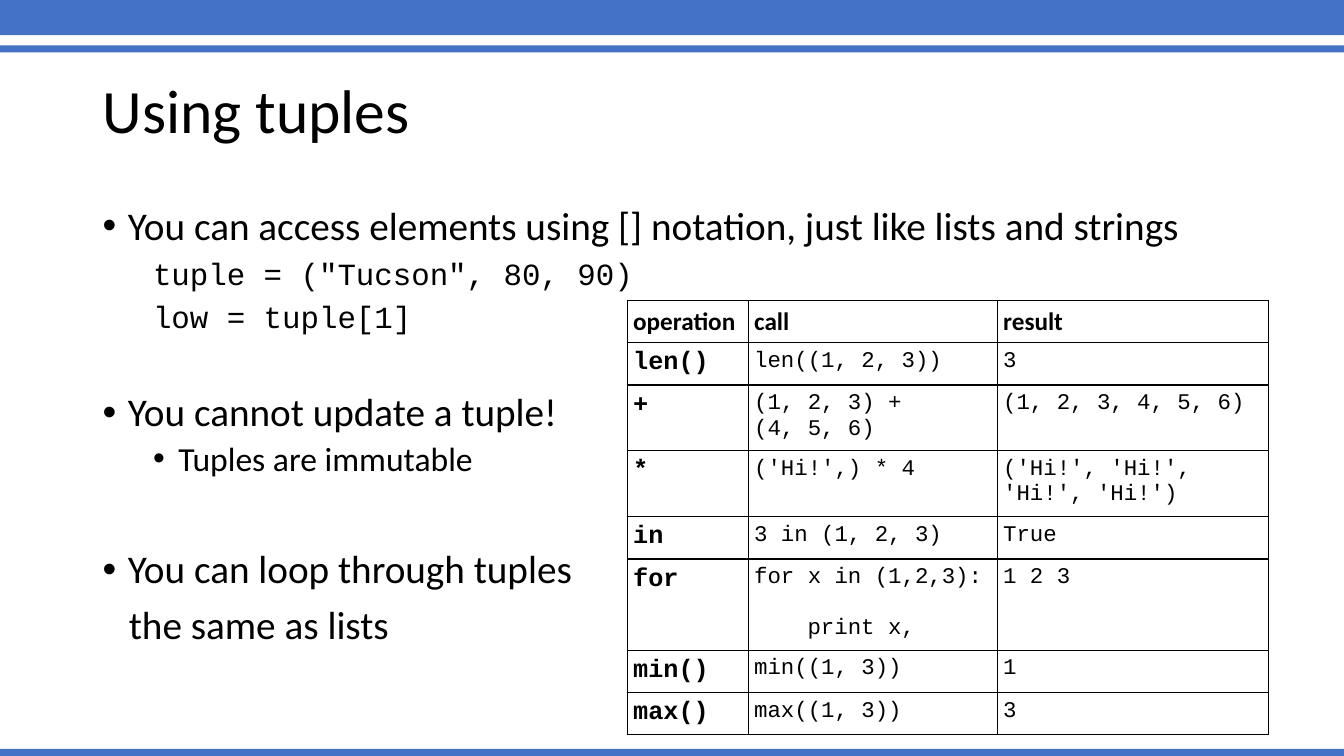
from lxml import etree
from pptx import Presentation
from pptx.dml.color import RGBColor
from pptx.enum.shapes import MSO_SHAPE
from pptx.enum.text import MSO_ANCHOR
from pptx.oxml.ns import qn
from pptx.util import Inches, Pt

RECTANGLE = MSO_SHAPE.RECTANGLE
MIDDLE = MSO_ANCHOR.MIDDLE
TOP = MSO_ANCHOR.TOP
COLORS = {"band": "4472C4", "text": "000000", "border": "000000"}
SANS = "Calibri"
MONO = "Courier New"

SLIDE_WIDTH, SLIDE_HEIGHT = 13.33, 7.5
BANDS = [(-0.03, 0.38), (0.45, 0.07), (7.43, 0.07)]
TITLE_BOX = (0.92, 0.4, 11.5, 1.45)
BODY_BOX = (0.92, 2, 11.5, 4.76)
TABLE_BOX = (6.22, 2.98, 6.36, 4.1)

STYLES = {
    "point": (28, SANS, 0.25, -0.25, True),
    "code": (22, MONO, 0.5, 0, False),
    "detail": (24, SANS, 0.75, -0.25, True),
    "continuation": (28, SANS, 0.26, 0, False),
}
BODY = [
    ("point", 10, "You can access elements using [] notation, just like lists and strings"),
    ("code", 7, 'tuple = ("Tucson", 80, 90)'),
    ("code", 7, "low = tuple[1]"),
    ("point", 41.4, "You cannot update a tuple!"),
    ("detail", 5, "Tuples are immutable"),
    ("point", 50.8, "You can loop through tuples"),
    ("continuation", 10, "the same as lists"),
]

COLUMN_SHARES = [1.2, 2.47, 2.69]
ROW_SHARES = [0.42, 0.4, 0.61, 0.61, 0.4, 0.86, 0.4, 0.4]
LOOP_INDENT = 0.53
LOOP_GAP = 18
OPERATIONS = [
    ("operation", "call", "result"),
    ("len()", "len((1, 2, 3))", "3"),
    ("+", "(1, 2, 3) +\n(4, 5, 6)", "(1, 2, 3, 4, 5, 6)"),
    ("*", "('Hi!',) * 4", "('Hi!', 'Hi!', 'Hi!', 'Hi!')"),
    ("in", "3 in (1, 2, 3)", "True"),
    ("for", "for x in (1,2,3):\nprint x,", "1 2 3"),
    ("min()", "min((1, 3))", "1"),
    ("max()", "max((1, 3))", "3"),
]


def style_font(paragraph, size, name, bold=False):
    font = paragraph.font
    font.size, font.name, font.bold = Pt(size), name, bold
    font.color.rgb = RGBColor.from_string(COLORS["text"])


def set_indent(paragraph, margin, indent=0, bullet=False):
    properties = paragraph._p.get_or_add_pPr()
    properties.set("marL", str(Inches(margin)))
    properties.set("indent", str(Inches(indent)))
    if bullet:
        font = etree.Element(qn("a:buFont"), typeface="Arial")
        character = etree.Element(qn("a:buChar"), char="•")
        default_run = properties.find(qn("a:defRPr"))
        default_run.addprevious(font)
        default_run.addprevious(character)


def add_text_frame(slide, box, anchor):
    frame = slide.shapes.add_textbox(*map(Inches, box)).text_frame
    frame.word_wrap = True
    frame.vertical_anchor = anchor
    return frame


def add_bands(slide):
    for top, height in BANDS:
        band = slide.shapes.add_shape(
            RECTANGLE, 0, Inches(top), Inches(SLIDE_WIDTH), Inches(height)
        )
        band.shadow.inherit = False
        band.fill.solid()
        band.fill.fore_color.rgb = RGBColor.from_string(COLORS["band"])
        band.line.fill.background()


def add_title(slide, box):
    paragraph = add_text_frame(slide, box, MIDDLE).paragraphs[0]
    paragraph.text = "Using tuples"
    paragraph.line_spacing = 0.9
    style_font(paragraph, 44, SANS)


def add_body(slide, box):
    frame = add_text_frame(slide, box, TOP)
    for index, (style, space_before, text) in enumerate(BODY):
        paragraph = frame.add_paragraph() if index else frame.paragraphs[0]
        size, font_name, margin, indent, bullet = STYLES[style]
        paragraph.text = text
        paragraph.line_spacing = 0.9
        paragraph.space_before = Pt(space_before)
        style_font(paragraph, size, font_name)
        set_indent(paragraph, margin, indent, bullet)


def add_borders(cell):
    properties = cell._tc.get_or_add_tcPr()
    for position, side in enumerate(("a:lnL", "a:lnR", "a:lnT", "a:lnB")):
        line = etree.Element(qn(side), w=str(Pt(1)))
        fill = etree.SubElement(line, qn("a:solidFill"))
        etree.SubElement(fill, qn("a:srgbClr"), val=COLORS["border"])
        properties.insert(position, line)


def fill_cell(cell, text, is_header, is_operation):
    cell.margin_left = cell.margin_right = Inches(0.06)
    cell.margin_top = cell.margin_bottom = Inches(0.06)
    cell.vertical_anchor = TOP
    cell.fill.background()
    cell.text = text
    bold = is_header or is_operation
    for paragraph in cell.text_frame.paragraphs:
        style_font(paragraph, 18 if bold else 16, SANS if is_header else MONO, bold)
        if paragraph.text.startswith("print"):
            set_indent(paragraph, LOOP_INDENT)
            paragraph.space_before = Pt(LOOP_GAP)
    add_borders(cell)


def add_operations_table(slide, box):
    left, top, width, height = map(Inches, box)
    table = slide.shapes.add_table(
        len(OPERATIONS), len(COLUMN_SHARES), left, top, width, height
    ).table
    table.first_row = table.horz_banding = False
    for column, share in zip(table.columns, COLUMN_SHARES):
        column.width = int(width * share / sum(COLUMN_SHARES))
    for row, share in zip(table.rows, ROW_SHARES):
        row.height = int(height * share / sum(ROW_SHARES))
    for row_index, texts in enumerate(OPERATIONS):
        for column_index, text in enumerate(texts):
            cell = table.cell(row_index, column_index)
            fill_cell(cell, text, row_index == 0, column_index == 0)


def main():
    presentation = Presentation()
    presentation.slide_width = Inches(SLIDE_WIDTH)
    presentation.slide_height = Inches(SLIDE_HEIGHT)
    slide = presentation.slides.add_slide(presentation.slide_layouts[6])
    add_bands(slide)
    add_title(slide, TITLE_BOX)
    add_body(slide, BODY_BOX)
    add_operations_table(slide, TABLE_BOX)
    presentation.save("out.pptx")


if __name__ == "__main__":
    main()
